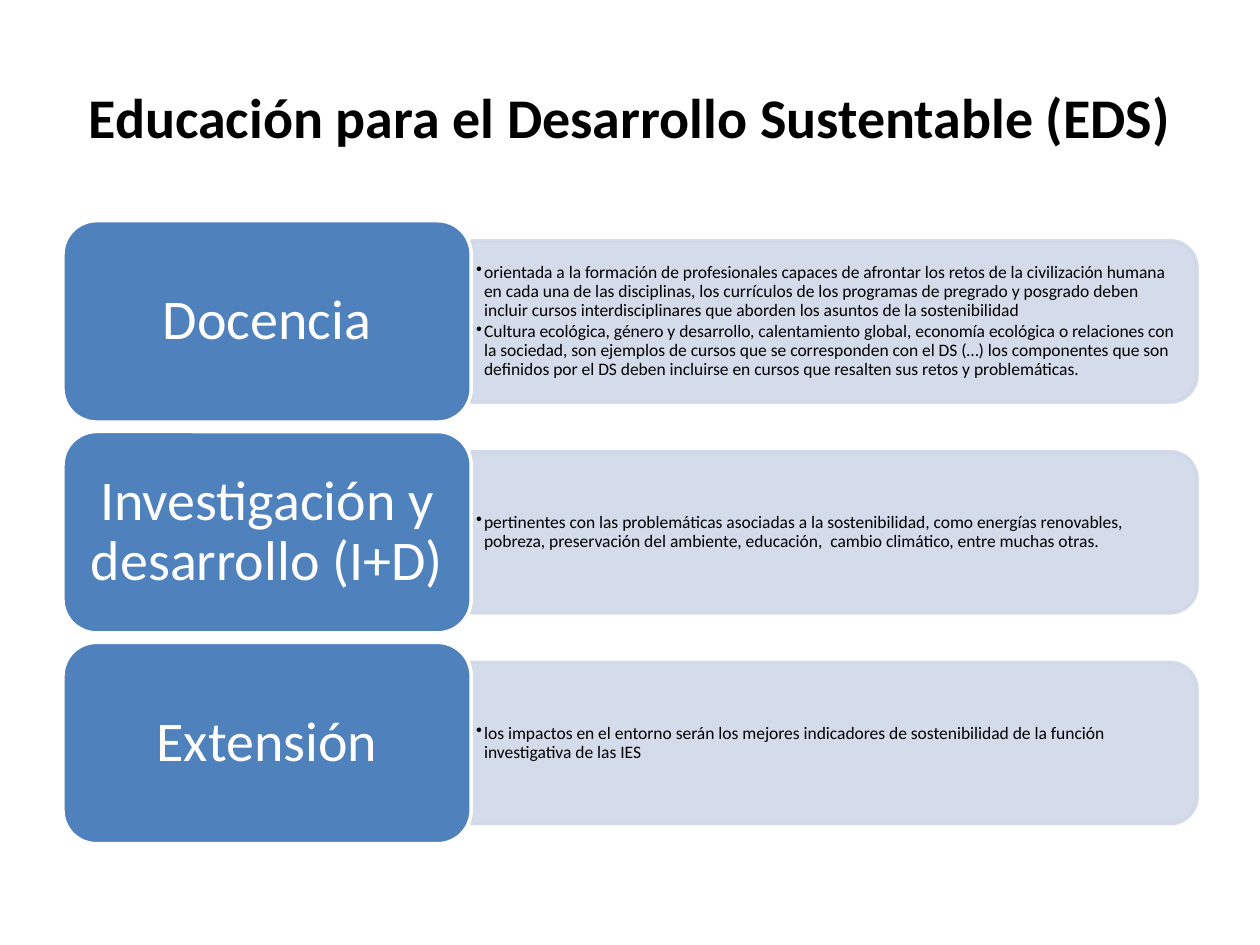
from dataclasses import dataclass

from lxml import etree
from pptx import Presentation
from pptx.dml.color import RGBColor
from pptx.enum.shapes import MSO_SHAPE
from pptx.enum.text import MSO_ANCHOR, PP_ALIGN
from pptx.oxml.ns import qn
from pptx.util import Cm, Pt

ROUNDED = MSO_SHAPE.ROUNDED_RECTANGLE
ROUNDED_TOP = MSO_SHAPE.ROUND_2_SAME_RECTANGLE
MIDDLE = MSO_ANCHOR.MIDDLE
LEFT, CENTER = PP_ALIGN.LEFT, PP_ALIGN.CENTER

TITLE = "Educación para el Desarrollo Sustentable (EDS)"
FUNCTIONS = [
    ("Docencia", [
        "orientada a la formación de profesionales capaces de afrontar los retos de la "
        "civilización humana en cada una de las disciplinas, los currículos de los programas "
        "de pregrado y posgrado deben incluir cursos interdisciplinares que aborden los "
        "asuntos de la sostenibilidad",
        "Cultura ecológica, género y desarrollo, calentamiento global, economía ecológica o "
        "relaciones con la sociedad, son ejemplos de cursos que se corresponden con el DS (…) "
        "los componentes que son definidos por el DS deben incluirse en cursos que resalten "
        "sus retos y problemáticas.",
    ]),
    ("Investigación y desarrollo (I+D)", [
        "pertinentes con las problemáticas asociadas a la sostenibilidad, como energías "
        "renovables, pobreza, preservación del ambiente, educación,  cambio climático, entre "
        "muchas otras.",
    ]),
    ("Extensión", [
        "los impactos en el entorno serán los mejores indicadores de sostenibilidad de la "
        "función investigativa de las IES",
    ]),
]

MARGIN, TOP, PITCH = 1.27, 4.45, 4.25
LABEL_WIDTH, LABEL_HEIGHT = 8.23, 4.06
PANEL_WIDTH, PANEL_HEIGHT = 14.63, 3.25
LIST_WIDTH, LIST_HEIGHT = 14.48, 2.92


@dataclass(frozen=True)
class Theme:
    font: str = "Calibri"
    ink: RGBColor = RGBColor(0x00, 0x00, 0x00)
    paper: RGBColor = RGBColor(0xFF, 0xFF, 0xFF)
    label: RGBColor = RGBColor(0x4F, 0x81, 0xBD)
    panel: RGBColor = RGBColor(0xD0, 0xD8, 0xE8)
    panel_opacity: int = 90
    heading_size: int = 32
    list_size: int = 10
    outline: int = 2


def write_text(frame, lines, *, font, size, color, bold=False, align=LEFT,
               spacing=1.0, after=0, inset=(0.25, 0.13), bullet_indent=0):
    """Fill a text frame with one formatted paragraph per line."""
    frame.word_wrap = True
    frame.vertical_anchor = MIDDLE
    frame.margin_left = frame.margin_right = Cm(inset[0])
    frame.margin_top = frame.margin_bottom = Cm(inset[1])
    for index, line in enumerate(lines):
        para = frame.add_paragraph() if index else frame.paragraphs[0]
        para.alignment = align
        para.line_spacing = spacing
        para.space_before = Pt(0)
        para.space_after = Pt(after)
        if bullet_indent:
            properties = para._p.get_or_add_pPr()
            properties.set("marL", str(Cm(bullet_indent)))
            properties.set("indent", str(-Cm(bullet_indent)))
            etree.SubElement(properties, qn("a:buChar")).set("char", "•")
        span = para.add_run()
        span.text = line
        span.font.name = font
        span.font.size = Pt(size)
        span.font.bold = bold
        span.font.color.rgb = color


class SlideBuilder:
    """Draws the elements of one slide in a shared style."""

    def __init__(self, slide, theme):
        self.slide = slide
        self.theme = theme

    def title(self, text):
        """Place the slide title."""
        box = self.slide.shapes.title
        box.left, box.top, box.width, box.height = Cm(MARGIN), Cm(0.76), Cm(22.86), Cm(3.18)
        write_text(box.text_frame, [text], font=self.theme.font, bold=True, align=CENTER,
                   size=self.theme.heading_size, color=self.theme.ink)

    def block(self, kind, left, top, width, height, fill, line):
        """Add a flat filled shape with an outline."""
        shape = self.slide.shapes.add_shape(kind, Cm(left), Cm(top), Cm(width), Cm(height))
        shape.shadow.inherit = False
        shape.fill.solid()
        shape.fill.fore_color.rgb = fill
        shape.line.color.rgb = line
        shape.line.width = Pt(self.theme.outline)
        return shape

    def panel(self, left, middle):
        """Add a translucent panel rounded on its right side."""
        color = self.theme.panel
        shape = self.block(ROUNDED_TOP, left + (PANEL_WIDTH - PANEL_HEIGHT) / 2,
                           middle - PANEL_WIDTH / 2, PANEL_HEIGHT, PANEL_WIDTH, color, color)
        shape.rotation = 90
        for tint in shape._element.spPr.iter(qn("a:srgbClr")):
            etree.SubElement(tint, qn("a:alpha")).set("val", str(self.theme.panel_opacity * 1000))

    def bullets(self, left, middle, lines):
        """Add a bulleted list centred on a height."""
        box = self.slide.shapes.add_textbox(Cm(left), Cm(middle - LIST_HEIGHT / 2),
                                            Cm(LIST_WIDTH), Cm(LIST_HEIGHT))
        write_text(box.text_frame, lines, font=self.theme.font, size=self.theme.list_size,
                   color=self.theme.ink, spacing=0.9, after=1.5, inset=(0.1, 0.05),
                   bullet_indent=0.16)

    def label(self, left, middle, text):
        """Add a rounded label centred on a height."""
        shape = self.block(ROUNDED, left, middle - LABEL_HEIGHT / 2, LABEL_WIDTH, LABEL_HEIGHT,
                           self.theme.label, self.theme.paper)
        write_text(shape.text_frame, [text], font=self.theme.font, align=CENTER,
                   size=self.theme.heading_size, color=self.theme.paper,
                   spacing=0.9, inset=(0.34, 0.17))


def main():
    """Build and save the deck."""
    deck = Presentation()
    deck.slide_width, deck.slide_height = Cm(25.4), Cm(19.05)
    page = SlideBuilder(deck.slides.add_slide(deck.slide_layouts[5]), Theme())
    page.title(TITLE)
    panel_left = MARGIN + LABEL_WIDTH
    for row, (name, lines) in enumerate(FUNCTIONS):
        middle = TOP + row * PITCH + LABEL_HEIGHT / 2
        page.panel(panel_left, middle)
        page.bullets(panel_left, middle, lines)
        page.label(MARGIN, middle, name)
    deck.save("out.pptx")


if __name__ == "__main__":
    main()
